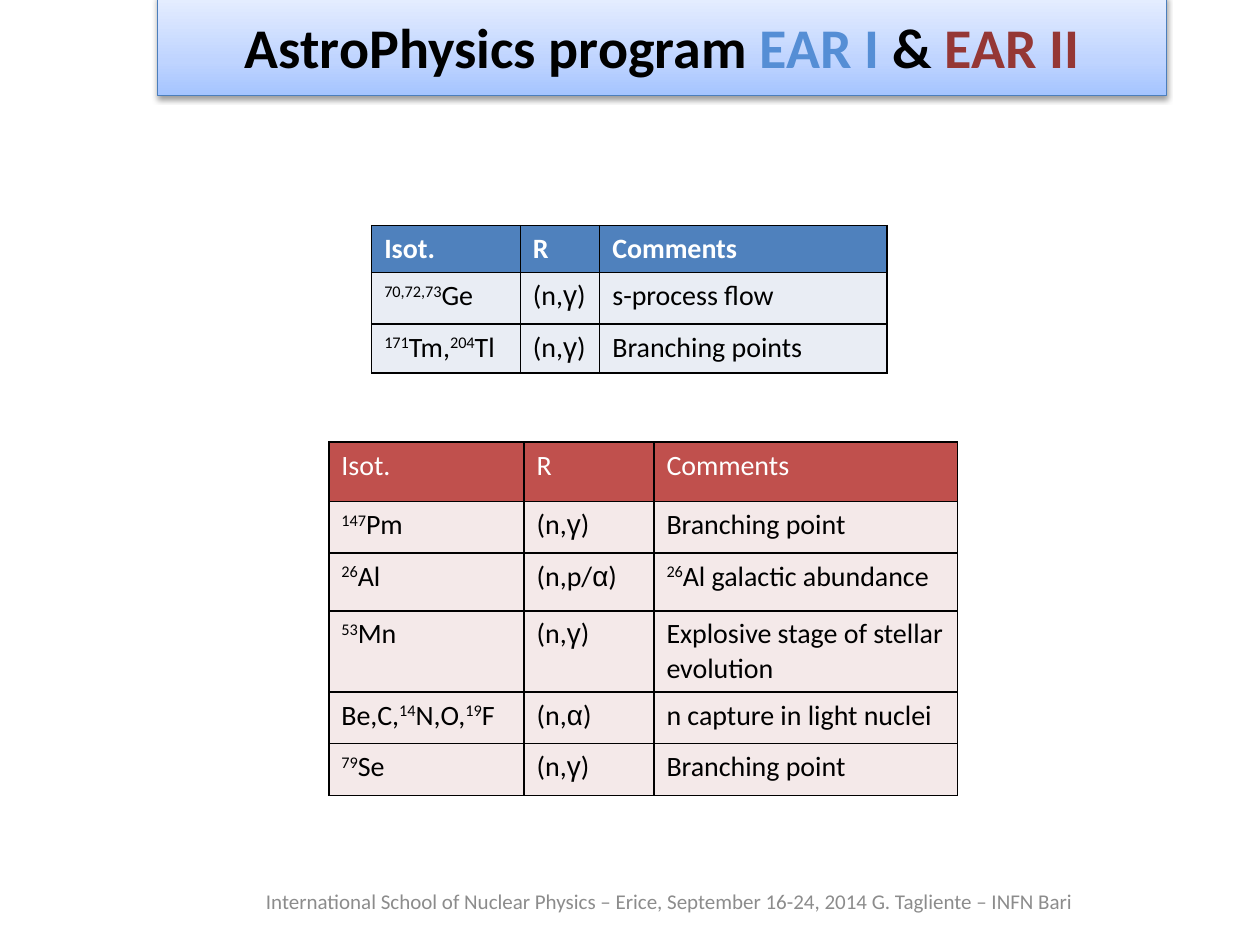
"""Build the AstroPhysics program slide with its two isotope tables."""
from itertools import groupby

from pptx import Presentation
from pptx import util as u
from pptx.dml.color import RGBColor
from pptx.enum import text
from pptx.oxml import parse_xml
from pptx.oxml.ns import nsdecls

BLACK = RGBColor(0x00, 0x00, 0x00)
WHITE = RGBColor(0xFF, 0xFF, 0xFF)
GRAY = RGBColor(0x8C, 0x8C, 0x8C)
OUTLINE = RGBColor(0x4B, 0x7E, 0xBC)
EAR1_TEXT = RGBColor(0x55, 0x8E, 0xD5)
EAR2_TEXT = RGBColor(0x95, 0x37, 0x35)
EAR1_HEAD = RGBColor(0x4F, 0x81, 0xBD)
EAR1_BODY = RGBColor(0xE9, 0xED, 0xF4)
EAR2_HEAD = RGBColor(0xC0, 0x50, 0x4D)
EAR2_BODY = RGBColor(0xF4, 0xE9, 0xE9)
NS = nsdecls("a")


def add_isotope_text(p, marked):
    for i, part in enumerate(marked.split("^")):
        for greek, chars in groupby(part, lambda c: c in "αγ"):
            r = p.add_run()
            r.text = "".join(chars)
            r.font.name = "Arial" if greek else "Calibri"
            if i % 2:
                r._r.get_or_add_rPr().set("baseline", "30000")


def format_cell(cell, marked, fill, color, bold):
    tcPr = cell._tc.get_or_add_tcPr()
    for side in ("lnL", "lnR", "lnT", "lnB"):
        tcPr.append(parse_xml(
            f'<a:{side} {NS} w="12700"><a:solidFill><a:srgbClr val="{BLACK}"/>'
            f'</a:solidFill></a:{side}>'))
    cell.fill.solid()
    cell.fill.fore_color.rgb = fill
    p = cell.text_frame.paragraphs[0]
    add_isotope_text(p, marked)
    p.font.size = u.Pt(16)
    p.font.bold = bold
    p.font.color.rgb = color
    for r in p.runs:
        r.font.size, r.font.bold = u.Pt(16), bold
        r.font.color.rgb = color


prs = Presentation()
prs.slide_width, prs.slide_height = u.Inches(10), u.Inches(7.5)
col = row = prs.slide_width / 100
s = prs.slides.add_slide(prs.slide_layouts[5])

title = s.shapes.title
title.left, title.top = int(12.5 * col), int(-0.3 * row)
title.width, title.height = int(80.1 * col), int(7.9 * row)
spPr = title._element.spPr
spPr.append(parse_xml(f'<a:prstGeom {NS} prst="roundRect"><a:avLst/></a:prstGeom>'))
stops = "".join(f'<a:gs pos="{pos}000"><a:srgbClr val="{rgb}"/></a:gs>'
                for pos, rgb in ((0, "A4C4FF"), (35, "BFD4FF"), (100, "E6EEFF")))
spPr.append(parse_xml(f'<a:gradFill {NS} rotWithShape="1"><a:gsLst>{stops}</a:gsLst>'
                      '<a:lin ang="16200000" scaled="0"/></a:gradFill>'))
title.line.color.rgb = OUTLINE
title.line.width = u.Pt(0.75)
spPr.append(parse_xml(
    f'<a:effectLst {NS}><a:outerShdw blurRad="40000" dist="20000" dir="5400000" '
    f'rotWithShape="0"><a:srgbClr val="{BLACK}"><a:alpha val="38000"/></a:srgbClr>'
    '</a:outerShdw></a:effectLst>'))
tf = title.text_frame
tf.auto_size = text.MSO_AUTO_SIZE.NONE
tf.vertical_anchor = text.MSO_ANCHOR.MIDDLE
p = tf.paragraphs[0]
p.alignment = text.PP_ALIGN.CENTER
p.font.name, p.font.size, p.font.bold = "Calibri", u.Pt(32), True
for words, color in (("AstroPhysics program ", BLACK), ("EAR I", EAR1_TEXT),
                     (" & ", BLACK), ("EAR II", EAR2_TEXT)):
    r = p.add_run()
    r.text = words
    r.font.name, r.font.size, r.font.bold = "Calibri", u.Pt(32), True
    r.font.color.rgb = color

header = ("Isot.", "R", "Comments")
ear1 = (header,
        ("^70,72,73^Ge", "(n,γ)", "s-process flow"),
        ("^171^Tm,^204^Tl", "(n,γ)", "Branching points"))
ear2 = (header,
        ("^147^Pm", "(n,γ)", "Branching point"),
        ("^26^Al", "(n,p/α)", "^26^Al galactic abundance"),
        ("^53^Mn", "(n,γ)", "Explosive stage of stellar evolution"),
        ("Be,C,^14^N,O,^19^F", "(n,α)", "n capture in light nuclei"),
        ("^79^Se", "(n,γ)", "Branching point"))
tables = (
    (ear2, 26.1, 35.1, (15.5, 10.3, 24.1), (4.7, 4.1, 4.6, 6.4, 4.1, 4.1),
     EAR2_HEAD, EAR2_BODY, False),
    (ear1, 29.5, 17.9, (11.8, 6.3, 22.8), (3.6, 4.1, 3.9),
     EAR1_HEAD, EAR1_BODY, True))
for data, left, top, widths, heights, head, body, bold_head in tables:
    table = s.shapes.add_table(
        len(data), len(header), int(left * col), int(top * row),
        int(sum(widths) * col), int(sum(heights) * row)).table
    table.first_row = table.horz_banding = False
    for column, width in zip(table.columns, widths):
        column.width = int(width * col)
    for i, (values, height) in enumerate(zip(data, heights)):
        table.rows[i].height = int(height * row)
        for j, value in enumerate(values):
            format_cell(table.cell(i, j), value, body if i else head,
                        BLACK if i else WHITE, bold_head and i == 0)

footer = s.shapes.add_textbox(int(19.3 * col), int(69.5 * row), int(67.7 * col), int(4 * row))
tf = footer.text_frame
tf.word_wrap = True
tf.vertical_anchor = text.MSO_ANCHOR.MIDDLE
p = tf.paragraphs[0]
p.text = "International School of Nuclear Physics – Erice, September 16-24, 2014 G. Tagliente – INFN Bari"
p.alignment = text.PP_ALIGN.CENTER
p.font.name, p.font.size = "Calibri", u.Pt(12)
p.font.color.rgb = GRAY

prs.save("out.pptx")
